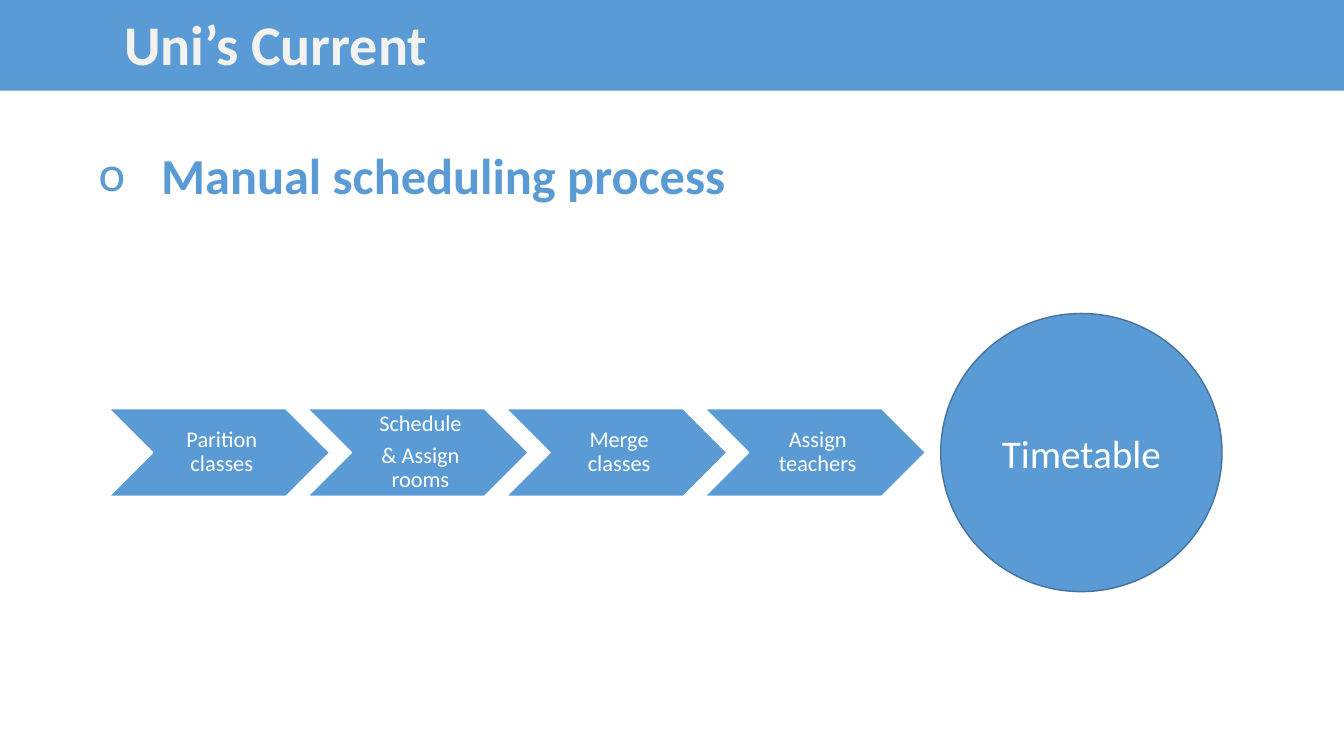
from lxml.etree import SubElement
from pptx import Presentation
from pptx.dml.color import RGBColor
from pptx.enum.shapes import MSO_SHAPE
from pptx.enum.text import MSO_ANCHOR, MSO_AUTO_SIZE, PP_ALIGN
from pptx.oxml.ns import qn
from pptx.util import Inches, Pt

TITLE = "Uni’s Current"
HEADING = "Manual scheduling process"
STEPS = ["Parition classes", "Schedule\n& Assign rooms", "Merge classes", "Assign teachers"]
RESULT = "Timetable"

THEME = {
    "font": "Calibri",
    "blue": RGBColor.from_string("5B9BD5"),
    "edge": RGBColor.from_string("43739E"),
    "white": RGBColor.from_string("FFFFFF"),
    "title": RGBColor.from_string("F2F2EF"),
    "title_size": 40,
    "heading_size": 36,
    "result_size": 28,
    "step_size": 16,
}

# Process row: chevrons at an equal pitch, the result circle on the same axis
STEP_LEFT, STEP_PITCH = 1.08, 1.97
STEP_WIDTH, STEP_HEIGHT = 2.19, 0.87
AXIS = 4.49
RESULT_LEFT, RESULT_WIDTH, RESULT_HEIGHT = 9.33, 2.79, 2.76

presentation = Presentation()
presentation.slide_width = Inches(13.33)
presentation.slide_height = Inches(7.5)
slide = presentation.slides.add_slide(presentation.slide_layouts[6])


def write(frame, text, size, color, bold=False, align=PP_ALIGN.LEFT):
    frame.text = text
    frame.vertical_anchor = MSO_ANCHOR.MIDDLE
    for paragraph in frame.paragraphs:
        paragraph.alignment = align
        for run in paragraph.runs:
            run.font.name = THEME["font"]
            run.font.size = Pt(size)
            run.font.bold = bold
            run.font.color.rgb = color


def add_blue_shape(preset, left, top, width, height, edge=None):
    shape = slide.shapes.add_shape(
        preset, Inches(left), Inches(top), Inches(width), Inches(height))
    shape.shadow.inherit = False
    shape.fill.solid()
    shape.fill.fore_color.rgb = THEME["blue"]
    if edge is None:
        shape.line.fill.background()
    else:
        shape.line.color.rgb = edge
        shape.line.width = Pt(1)
    return shape


# Title band
band = add_blue_shape(MSO_SHAPE.RIGHT_ARROW, 0, -0.51, 14.71, 1.88)
write(band.text_frame, TITLE, THEME["title_size"], THEME["title"], bold=True)
band.text_frame.margin_left = Inches(1.23)

# Process steps
for index, step in enumerate(STEPS):
    chevron = add_blue_shape(
        MSO_SHAPE.CHEVRON, STEP_LEFT + index * STEP_PITCH, AXIS - STEP_HEIGHT / 2,
        STEP_WIDTH, STEP_HEIGHT, THEME["white"])
    frame = chevron.text_frame
    write(frame, step, THEME["step_size"], THEME["white"], align=PP_ALIGN.CENTER)
    frame.margin_left = Inches(0.07)
    frame.margin_top = frame.margin_right = frame.margin_bottom = Inches(0.02)
    for paragraph in frame.paragraphs:
        paragraph.line_spacing = 0.9
        paragraph.space_after = Pt(0.35 * THEME["step_size"])

# Result
circle = add_blue_shape(
    MSO_SHAPE.OVAL, RESULT_LEFT, AXIS - RESULT_HEIGHT / 2,
    RESULT_WIDTH, RESULT_HEIGHT, THEME["edge"])
write(circle.text_frame, RESULT, THEME["result_size"], THEME["white"], align=PP_ALIGN.CENTER)

# Bulleted heading
heading = slide.shapes.add_textbox(Inches(0.88), Inches(1.37), Inches(6.5), Inches(0.71))
write(heading.text_frame, HEADING, THEME["heading_size"], THEME["blue"], bold=True)
heading.text_frame.word_wrap = False
heading.text_frame.auto_size = MSO_AUTO_SIZE.SHAPE_TO_FIT_TEXT
properties = heading.text_frame.paragraphs[0]._p.get_or_add_pPr()
properties.set("marL", str(Inches(0.62)))
properties.set("indent", str(Inches(-0.62)))
SubElement(properties, qn("a:buFont")).set("typeface", THEME["font"])
SubElement(properties, qn("a:buChar")).set("char", "o")

presentation.save("out.pptx")
